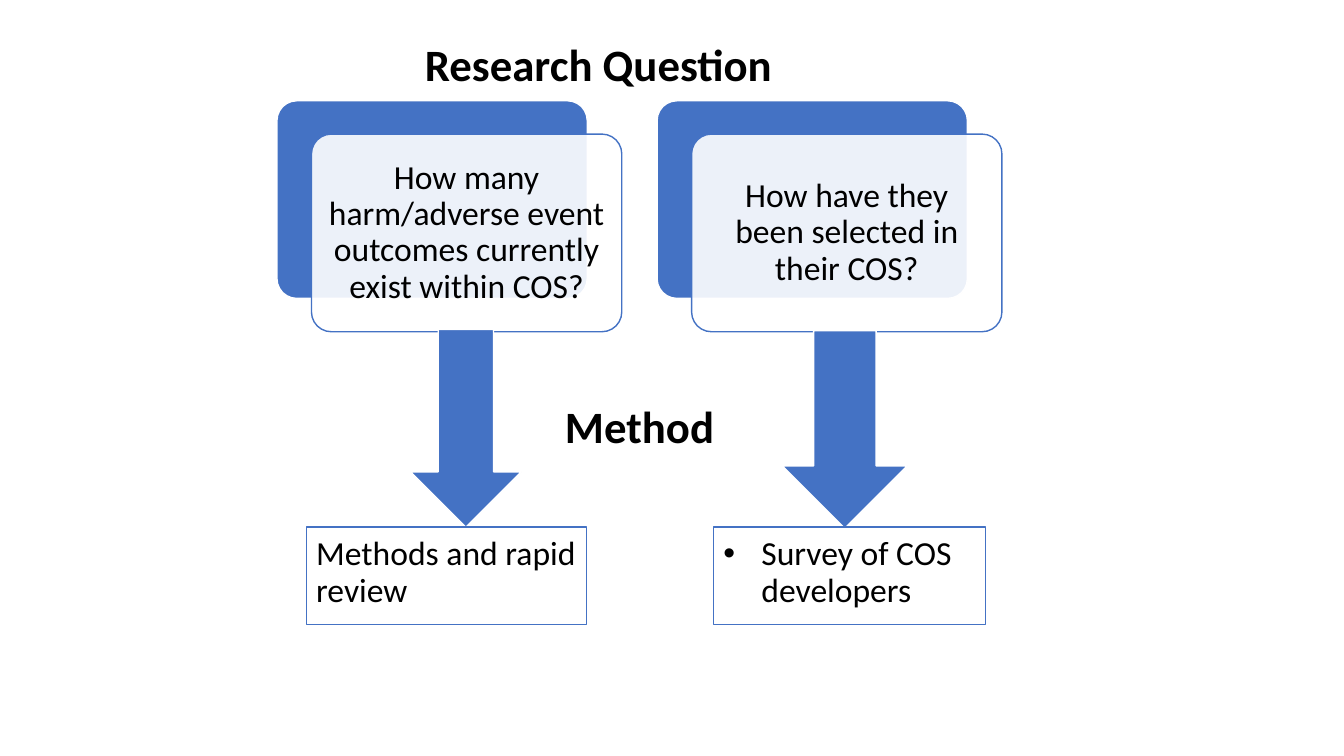
from dataclasses import dataclass

from lxml.etree import SubElement
from pptx import Presentation
from pptx.dml.color import RGBColor
from pptx.enum.shapes import MSO_SHAPE
from pptx.enum.text import MSO_ANCHOR, PP_ALIGN
from pptx.oxml.ns import qn
from pptx.shapes.autoshape import Shape
from pptx.slide import Slide
from pptx.util import Cm, Pt

COLORS = {"blue": "4472C4", "white": "FFFFFF", "text": "000000"}
HEADING = {"name": "Calibri", "size": Pt(32), "bold": True}
BODY = {"name": "Calibri", "size": Pt(24), "bold": False}
INSET = Cm(0.25)
BULLET_INDENT = Cm(0.96)


@dataclass(frozen=True)
class Box:
    """A frame in centimetres."""
    left: float
    top: float
    width: float
    height: float

    def shifted(self, dx: float, dy: float) -> "Box":
        return Box(self.left + dx, self.top + dy, self.width, self.height)

    def lengths(self) -> tuple[Cm, Cm, Cm, Cm]:
        return Cm(self.left), Cm(self.top), Cm(self.width), Cm(self.height)


@dataclass(frozen=True)
class Heading:
    text: str
    box: Box
    anchor: MSO_ANCHOR
    line_spacing: float


@dataclass(frozen=True)
class Strand:
    """One research question, the arrow below it and its method."""
    question: str
    method: str
    arrow: Box
    method_box: Box
    bulleted: bool


TITLE = Heading("Research Question", Box(3.02, 0.91, 24.13, 1.55), MSO_ANCHOR.MIDDLE, 0.9)
METHOD = Heading("Method", Box(3.1, 9.5, 26.04, 2.03), MSO_ANCHOR.BOTTOM, 0.8)

FIRST_CARD = Box(6.98, 2.54, 7.82, 4.98)
CARD_PITCH = 9.58
FRONT_OFFSET = (0.87, 0.84)

STRANDS = [
    Strand("How many harm/adverse event outcomes currently exist within COS?",
           "Methods and rapid review",
           Box(9.25, 9.4, 4.98, 2.79), Box(7.72, 13.28, 7.06, 2.46), False),
    Strand("How have they been selected in their COS?",
           "Survey of COS developers",
           Box(18.8, 9.25, 4.98, 3.15), Box(17.98, 13.28, 6.86, 2.46), True),
]


def color(name: str) -> RGBColor:
    return RGBColor.from_string(COLORS[name])


def write(shape: Shape, text: str, font: dict, align: PP_ALIGN,
          anchor: MSO_ANCHOR, line_spacing: float = 0.9) -> None:
    frame = shape.text_frame
    frame.word_wrap = True
    frame.vertical_anchor = anchor
    paragraph = frame.paragraphs[0]
    paragraph.alignment = align
    paragraph.line_spacing = line_spacing
    run = paragraph.add_run()
    run.text = text
    for attribute, value in font.items():
        setattr(run.font, attribute, value)
    run.font.color.rgb = color("text")


def draw_heading(slide: Slide, heading: Heading) -> None:
    label = slide.shapes.add_textbox(*heading.box.lengths())
    write(label, heading.text, HEADING, PP_ALIGN.CENTER, heading.anchor, heading.line_spacing)


def draw_shape(slide: Slide, preset: MSO_SHAPE, box: Box, fill: str, line: str) -> Shape:
    shape = slide.shapes.add_shape(preset, *box.lengths())
    shape.shadow.inherit = False
    shape.fill.solid()
    shape.fill.fore_color.rgb = color(fill)
    shape.line.color.rgb = color(line)
    shape.line.width = Pt(1)
    for side in ("left", "right", "top", "bottom"):
        setattr(shape.text_frame, f"margin_{side}", INSET)
    return shape


def set_opacity(shape: Shape, percent: int) -> None:
    rgb = shape.fill._xPr.find(qn("a:solidFill")).find(qn("a:srgbClr"))
    SubElement(rgb, qn("a:alpha"), val=str(percent * 1000))


def add_bullet(shape: Shape) -> None:
    properties = shape.text_frame.paragraphs[0]._p.get_or_add_pPr()
    properties.set("marL", str(BULLET_INDENT))
    properties.set("indent", str(-BULLET_INDENT))
    SubElement(properties, qn("a:buFont"), typeface="Arial")
    SubElement(properties, qn("a:buChar"), char="•")


def draw_question(slide: Slide, question: str, box: Box) -> None:
    """Draw a blue card with a translucent white card and the question over it."""
    back = draw_shape(slide, MSO_SHAPE.ROUNDED_RECTANGLE, box, "blue", "white")
    front = draw_shape(slide, MSO_SHAPE.ROUNDED_RECTANGLE, box.shifted(*FRONT_OFFSET),
                       "white", "blue")
    for card in (back, front):
        card.adjustments[0] = 0.1
    set_opacity(front, 90)
    write(front, question, BODY, PP_ALIGN.CENTER, MSO_ANCHOR.MIDDLE)


def draw_method(slide: Slide, strand: Strand) -> None:
    arrow = draw_shape(slide, MSO_SHAPE.RIGHT_ARROW, strand.arrow, "blue", "white")
    arrow.rotation = 90
    method = draw_shape(slide, MSO_SHAPE.RECTANGLE, strand.method_box, "white", "blue")
    write(method, strand.method, BODY, PP_ALIGN.LEFT, MSO_ANCHOR.TOP)
    if strand.bulleted:
        add_bullet(method)


def main() -> None:
    presentation = Presentation()
    presentation.slide_width = Cm(33.87)
    presentation.slide_height = Cm(19.05)
    slide = presentation.slides.add_slide(presentation.slide_layouts[6])

    draw_heading(slide, TITLE)
    for column, strand in enumerate(STRANDS):
        draw_question(slide, strand.question, FIRST_CARD.shifted(column * CARD_PITCH, 0))
    draw_heading(slide, METHOD)
    for strand in STRANDS:
        draw_method(slide, strand)

    presentation.save("out.pptx")


if __name__ == "__main__":
    main()
